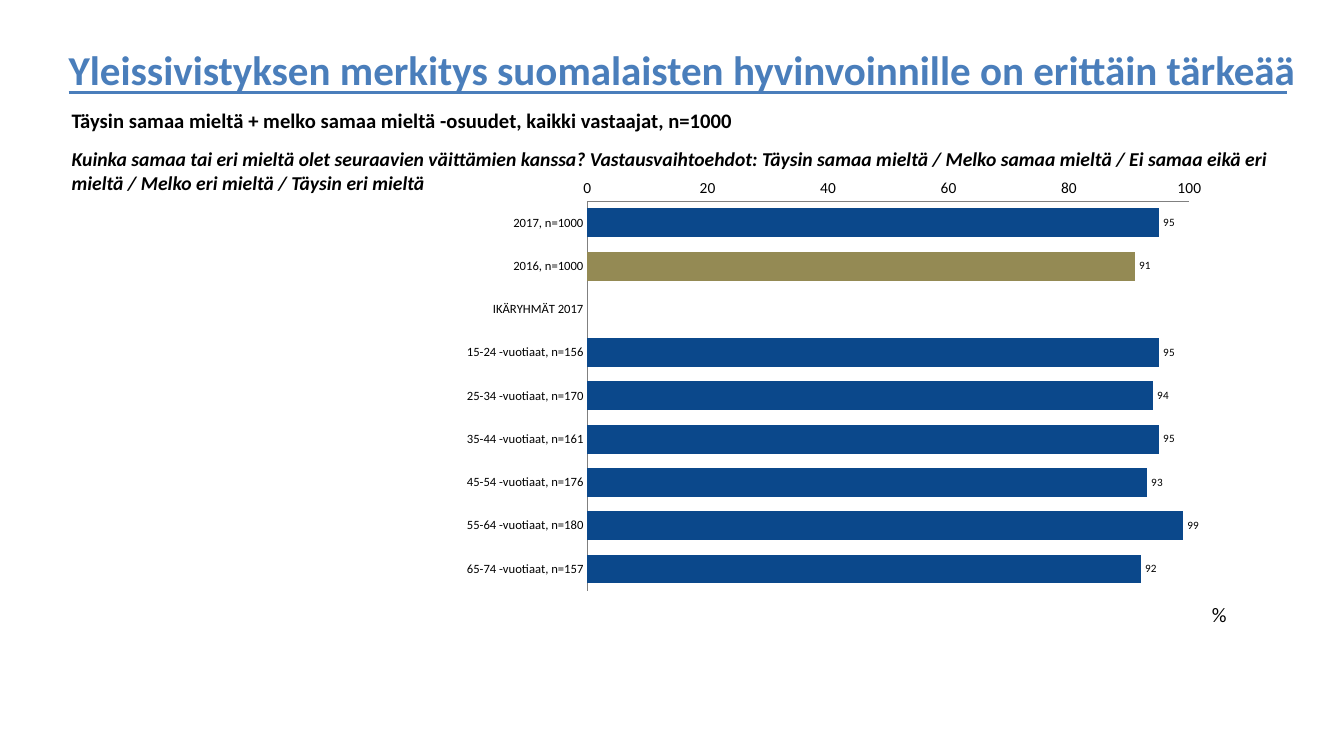
from lxml.etree import SubElement
from pptx import Presentation
from pptx.chart.data import CategoryChartData
from pptx.dml.color import RGBColor
from pptx.enum.chart import XL_AXIS_CROSSES, XL_CHART_TYPE, XL_LABEL_POSITION, XL_TICK_MARK
from pptx.enum.shapes import MSO_CONNECTOR
from pptx.enum.text import MSO_ANCHOR, MSO_AUTO_SIZE, PP_ALIGN
from pptx.oxml import parse_xml
from pptx.oxml.ns import nsdecls, qn
from pptx.util import Emu, Pt

PX = 9144  # 100 px to the inch
FONT = "Calibri"
BLACK, BLUE, NAVY, KHAKI, GREY = "000000", "4A7EBB", "0B488B", "948A54", "808080"

TITLE = "Yleissivistyksen merkitys suomalaisten hyvinvoinnille on erittäin tärkeää"
SAMPLE = "Täysin samaa mieltä + melko samaa mieltä -osuudet, kaikki vastaajat, n=1000"
QUESTION = (
    "Kuinka samaa tai eri mieltä olet seuraavien väittämien kanssa? "
    "Vastausvaihtoehdot: Täysin samaa mieltä / Melko samaa mieltä / "
    "Ei samaa eikä eri mieltä / Melko eri mieltä / Täysin eri mieltä"
)
SHARES = {
    "2017, n=1000": 95,
    "2016, n=1000": 91,
    "IKÄRYHMÄT 2017": None,
    "15-24 -vuotiaat, n=156": 95,
    "25-34 -vuotiaat, n=170": 94,
    "35-44 -vuotiaat, n=161": 95,
    "45-54 -vuotiaat, n=176": 93,
    "55-64 -vuotiaat, n=180": 99,
    "65-74 -vuotiaat, n=157": 92,
}
PREVIOUS_YEAR = 1
PLOT = {"x": 0.437, "y": 0.037, "w": 0.448, "h": 0.676}


def px(*lengths):
    return [Emu(length * PX) for length in lengths]


def color(hex_string):
    return RGBColor.from_string(hex_string)


def style_font(font, size, hex_string=BLACK, bold=False, italic=False):
    font.name, font.size = FONT, Pt(size)
    font.bold, font.italic = bold, italic
    font.color.rgb = color(hex_string)


def write_text(shape, text, size, hex_string=BLACK, bold=False, italic=False, wrap=True, inset=13):
    frame = shape.text_frame
    frame.word_wrap = wrap
    frame.auto_size = MSO_AUTO_SIZE.NONE
    frame.vertical_anchor = MSO_ANCHOR.TOP
    frame.margin_left, frame.margin_right, frame.margin_top, frame.margin_bottom = px(
        inset, inset, 5, 5
    )
    para = frame.paragraphs[0]
    para.text = text
    para.alignment = PP_ALIGN.LEFT
    style_font(para.font, size, hex_string, bold, italic)


def add_heading(slide, left, top, width, height):
    title = slide.shapes.title
    title.left, title.top, title.width, title.height = px(left, top, width, height)
    write_text(title, TITLE, 29.3, BLUE, bold=True, wrap=False, inset=10)
    title.text_frame.paragraphs[0].line_spacing = 1.0

    rule_y = top + 53
    rule = slide.shapes.add_connector(
        MSO_CONNECTOR.STRAIGHT, *px(left + 10, rule_y, left + 1218, rule_y)
    )
    rule.line.color.rgb = color(BLUE)
    rule.line.width = Pt(2.25)
    SubElement(rule._element.spPr, qn("a:effectLst"))


def add_introduction(slide, left, top, width):
    sample = slide.shapes.add_textbox(*px(left, top, 929, 35))
    write_text(sample, SAMPLE, 14.7, bold=True)
    question = slide.shapes.add_textbox(*px(left, top + 39, width, 57))
    write_text(question, QUESTION, 14, bold=True, italic=True)


def place_plot(chart):
    """Fix the inner plot area at the fractions of the chart given in PLOT."""
    plot_area = chart._chartSpace.chart.plotArea
    for layout in plot_area.findall(qn("c:layout")):
        plot_area.remove(layout)
    fractions = "".join(f'<c:{key} val="{value}"/>' for key, value in PLOT.items())
    plot_area.insert(0, parse_xml(
        f'<c:layout {nsdecls("c")}><c:manualLayout><c:layoutTarget val="inner"/>'
        f'<c:xMode val="edge"/><c:yMode val="edge"/>{fractions}'
        "</c:manualLayout></c:layout>"
    ))


def style_axis(axis, size):
    axis.has_major_gridlines = False
    axis.major_tick_mark = axis.minor_tick_mark = XL_TICK_MARK.NONE
    axis.format.line.color.rgb = color(GREY)
    axis.format.line.width = Pt(0.25)
    style_font(axis.tick_labels.font, size)


def add_share_chart(slide, left, top, width, height):
    data = CategoryChartData()
    data.categories = list(SHARES)
    data.add_series("Series 1", list(SHARES.values()))
    chart = slide.shapes.add_chart(
        XL_CHART_TYPE.BAR_CLUSTERED, *px(left, top, width, height), data
    ).chart
    chart.has_legend = chart.has_title = False
    style_font(chart.font, 11)
    place_plot(chart)

    categories, values = chart.category_axis, chart.value_axis
    style_axis(categories, 9)
    categories.reverse_order = True
    categories.crosses = XL_AXIS_CROSSES.MAXIMUM
    style_axis(values, 11)
    values.minimum_scale, values.maximum_scale, values.major_unit = 0, 100, 20

    plot = chart.plots[0]
    plot.gap_width = 50
    plot.vary_by_categories = False
    series = plot.series[0]
    point = series.points[PREVIOUS_YEAR]
    for bar, hex_string in ((series, NAVY), (point, KHAKI)):
        bar.format.fill.solid()
        bar.format.fill.fore_color.rgb = color(hex_string)
    labels = series.data_labels
    labels.show_value = True
    labels.position = XL_LABEL_POSITION.OUTSIDE_END
    style_font(labels.font, 8)

    unit = slide.shapes.add_textbox(*px(left + 1192, top + 415, 35, 35))
    write_text(unit, "%", 14.7, wrap=False, inset=10)


def main():
    deck = Presentation()
    deck.slide_width, deck.slide_height = px(1333, 750)
    slide = deck.slides.add_slide(deck.slide_layouts[5])
    add_share_chart(slide, 0, 177, 1333, 573)
    add_heading(slide, 58, 39, 1253, 59)
    add_introduction(slide, 58, 102, 1218)
    deck.save("out.pptx")


if __name__ == "__main__":
    main()
